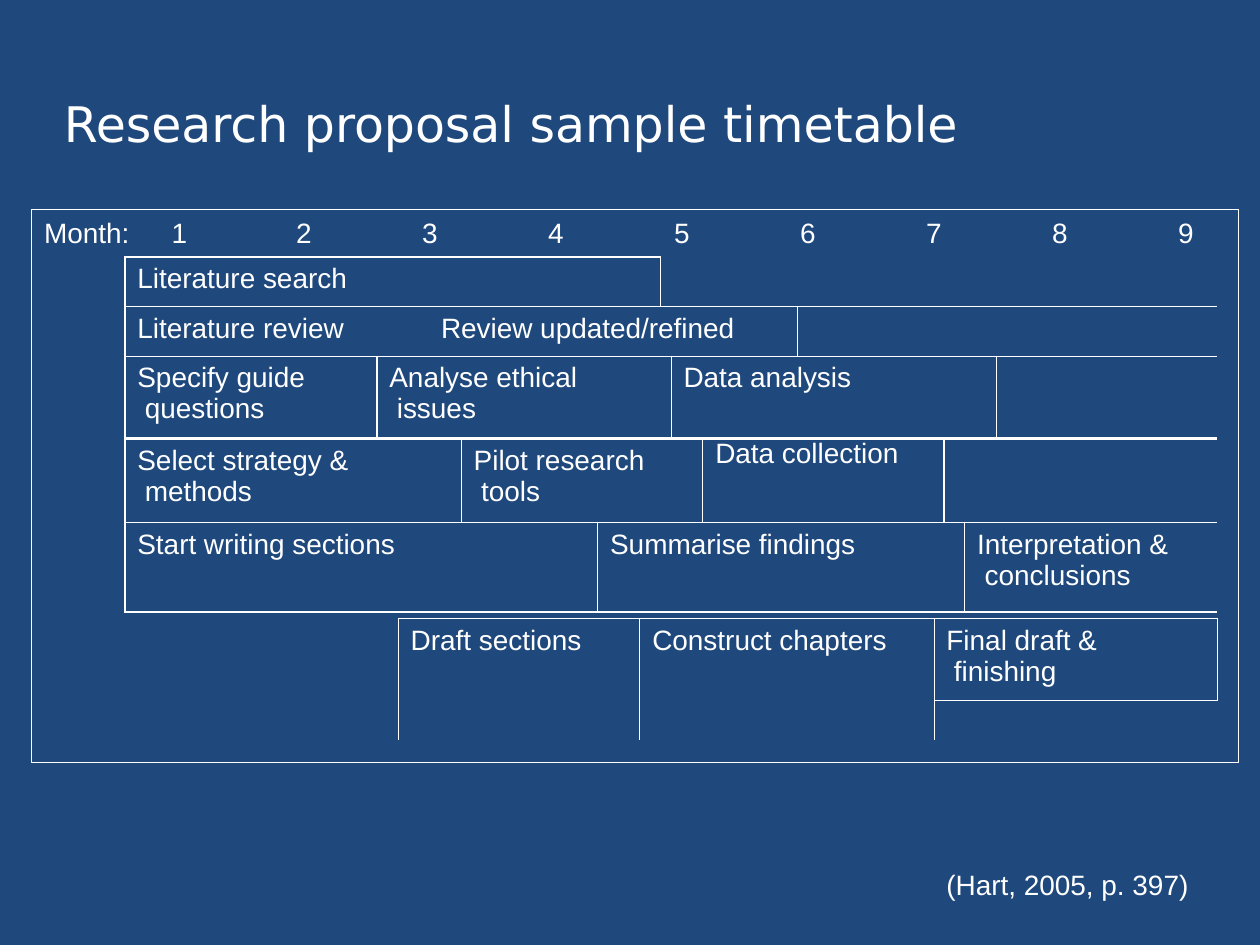
from copy import deepcopy
from typing import NamedTuple

from lxml import etree
from pptx import Presentation
from pptx.dml.color import RGBColor
from pptx.enum.shapes import MSO_SHAPE
from pptx.enum.text import MSO_ANCHOR, MSO_AUTO_SIZE, PP_ALIGN
from pptx.oxml.ns import qn
from pptx.util import Cm, Pt

RECTANGLE = MSO_SHAPE.RECTANGLE
TOP = MSO_ANCHOR.TOP
NO_AUTOFIT = MSO_AUTO_SIZE.NONE
LEFT = PP_ALIGN.LEFT

COLOURS = {"navy": "1F487C", "white": "FFFFFF"}
BODY_FONT = "Arial"
TITLE_FONT = "DejaVu Sans"
TITLE_ONLY = 5
MONTH_STEP = 2.54


class Task(NamedTuple):
    """A block of the timetable; a block without text is an empty stretch."""
    row: int
    column: int
    text: str = ""
    columns: int = 1
    rows: int = 1
    edges: str = "LRTB"
    top: float = 0.13


MAIN_COLUMNS = (5.08, 1.7, 2.75, 1.27, 0.21, 0.64, 1.9, 2.96, 0.42, 0.64, 4.45)
MAIN_ROWS = (1, 1, 1.66, 1.69, 1.81)
MAIN_RULES = (0.75, 0.75, 0.75, 1.5, 1, 1)
MAIN_TASKS = (
    Task(0, 0, "Literature search", 4),
    Task(0, 4, columns=7, edges="LB"),
    Task(1, 0, "Literature review\tReview updated/refined", 7),
    Task(1, 7, columns=4, edges="LTB"),
    Task(2, 0, "Specify guide\vquestions"),
    Task(2, 1, "Analyse ethical\vissues", 4),
    Task(2, 5, "Data analysis", 5),
    Task(2, 10, edges="LTB"),
    Task(3, 0, "Select strategy &\vmethods", 2),
    Task(3, 2, "Pilot research\vtools", 4),
    Task(3, 6, "Data collection", 2, top=0),
    Task(3, 8, columns=3, edges="LTB"),
    Task(4, 0, "Start writing sections", 3),
    Task(4, 3, "Summarise findings", 6),
    Task(4, 9, "Interpretation &\vconclusions", 2),
)

DRAFT_COLUMNS = (4.87, 5.93, 5.71)
DRAFT_ROWS = (1.65, 0.79)
DRAFT_RULES = (0.75, 0.75, 0.75)
DRAFT_TASKS = (
    Task(0, 0, "Draft sections", rows=2),
    Task(0, 1, "Construct chapters", rows=2),
    Task(0, 2, "Final draft &\vfinishing"),
    Task(1, 2, edges="LT"),
)


def colour(name):
    return RGBColor.from_string(COLOURS[name])


def set_tab(para, position):
    tabs = etree.SubElement(para._p.get_or_add_pPr(), qn("a:tabLst"))
    etree.SubElement(tabs, qn("a:tab"), pos=str(Cm(position)), algn="l")


def hang_second_line(para):
    properties = para._p.get_or_add_pPr()
    properties.set("marL", str(Cm(0.15)))
    properties.set("indent", str(-Cm(0.15)))


def format_spans(para, size=16, font=BODY_FONT):
    """Format the runs, and give line breaks the same text size."""
    for span in para.runs:
        span.font.size = Pt(size)
        span.font.name = font
        span.font.color.rgb = colour("white")
    for line_break in para._p.findall(qn("a:br")):
        line_break.append(deepcopy(para._p.find(qn("a:r")).find(qn("a:rPr"))))


def set_plain_frame(frame):
    frame.word_wrap = True
    frame.auto_size = NO_AUTOFIT
    frame.vertical_anchor = TOP
    frame.margin_left = frame.margin_right = frame.margin_bottom = 0
    frame.margin_top = Cm(0.03)


def add_title(page, text):
    title = page.shapes.title
    title.left, title.top, title.width, title.height = Cm(1.29), Cm(1.85), Cm(18.1), Cm(1.25)
    set_plain_frame(title.text_frame)
    title.text_frame.text = text
    para = title.text_frame.paragraphs[0]
    para.alignment = LEFT
    format_spans(para, 28, TITLE_FONT)


def add_label(page, text, left, top, width, tab=None):
    box = page.shapes.add_textbox(Cm(left), Cm(top), Cm(width), Cm(0.74))
    set_plain_frame(box.text_frame)
    box.text_frame.text = text
    para = box.text_frame.paragraphs[0]
    if tab:
        set_tab(para, tab)
    format_spans(para)


def add_frame(page):
    frame = page.shapes.add_shape(RECTANGLE, Cm(0.64), Cm(4.23), Cm(24.33), Cm(11.15))
    frame.shadow.inherit = False
    frame.fill.background()
    frame.line.color.rgb = colour("white")
    frame.line.width = Pt(0.72)


def set_border(cell, side, width):
    """Draw one side of a cell; a width of zero hides it."""
    properties = cell._tc.get_or_add_tcPr()
    line = etree.SubElement(properties, qn(f"a:ln{side}"), w=str(Pt(width)))
    if width:
        fill = etree.SubElement(line, qn("a:solidFill"))
        etree.SubElement(fill, qn("a:srgbClr"), val=COLOURS["white"])
    else:
        etree.SubElement(line, qn("a:noFill"))


def fill_task(table, task, rules):
    last_row = task.row + task.rows - 1
    last_column = task.column + task.columns - 1
    for row in range(task.row, last_row + 1):
        for column in range(task.column, last_column + 1):
            cell = table.cell(row, column)
            sides = {
                "L": 0.75 * (column == task.column),
                "R": 0.75 * (column == last_column),
                "T": rules[row] * (row == task.row),
                "B": rules[row + 1] * (row == last_row),
            }
            for side, width in sides.items():
                set_border(cell, side, width if side in task.edges else 0)
            cell.fill.solid()
            cell.fill.fore_color.rgb = colour("navy")
            cell.margin_left = Cm(0.25)
            cell.margin_right = cell.margin_bottom = 0
            cell.margin_top = Cm(task.top if task.text else 0)

    first = table.cell(task.row, task.column)
    if task.rows * task.columns > 1:
        first.merge(table.cell(last_row, last_column))
    if task.text:
        first.text_frame.text = task.text
        para = first.text_frame.paragraphs[0]
        if "\v" in task.text:
            hang_second_line(para)
        if "\t" in task.text:
            set_tab(para, 6.12)
        format_spans(para)


def add_timetable(page, left, top, columns, rows, rules, tasks):
    shape = page.shapes.add_table(len(rows), len(columns), Cm(left), Cm(top),
                                  Cm(sum(columns)), Cm(sum(rows)))
    table = shape.table
    table.first_row = table.horz_banding = False
    for column, width in zip(table.columns, columns):
        column.width = Cm(width)
    for row, height in zip(table.rows, rows):
        row.height = Cm(height)
    for task in tasks:
        fill_task(table, task, rules)


def main():
    deck = Presentation()
    deck.slide_width, deck.slide_height = Cm(25.4), Cm(19.05)
    page = deck.slides.add_slide(deck.slide_layouts[TITLE_ONLY])
    page.background.fill.solid()
    page.background.fill.fore_color.rgb = colour("navy")

    add_title(page, "Research proposal sample timetable")
    add_label(page, "(Hart, 2005, p. 397)", 19.08, 17.45, 5)
    add_frame(page)
    add_label(page, "Month:\t1", 0.89, 4.32, 2.93, tab=2.57)
    for month in range(2, 10):
        add_label(page, str(month), 0.89 + MONTH_STEP * month, 4.32, 0.38)
    add_timetable(page, 2.52, 5.18, MAIN_COLUMNS, MAIN_ROWS, MAIN_RULES, MAIN_TASKS)
    add_timetable(page, 8.03, 12.47, DRAFT_COLUMNS, DRAFT_ROWS, DRAFT_RULES, DRAFT_TASKS)
    deck.save("out.pptx")


if __name__ == "__main__":
    main()
